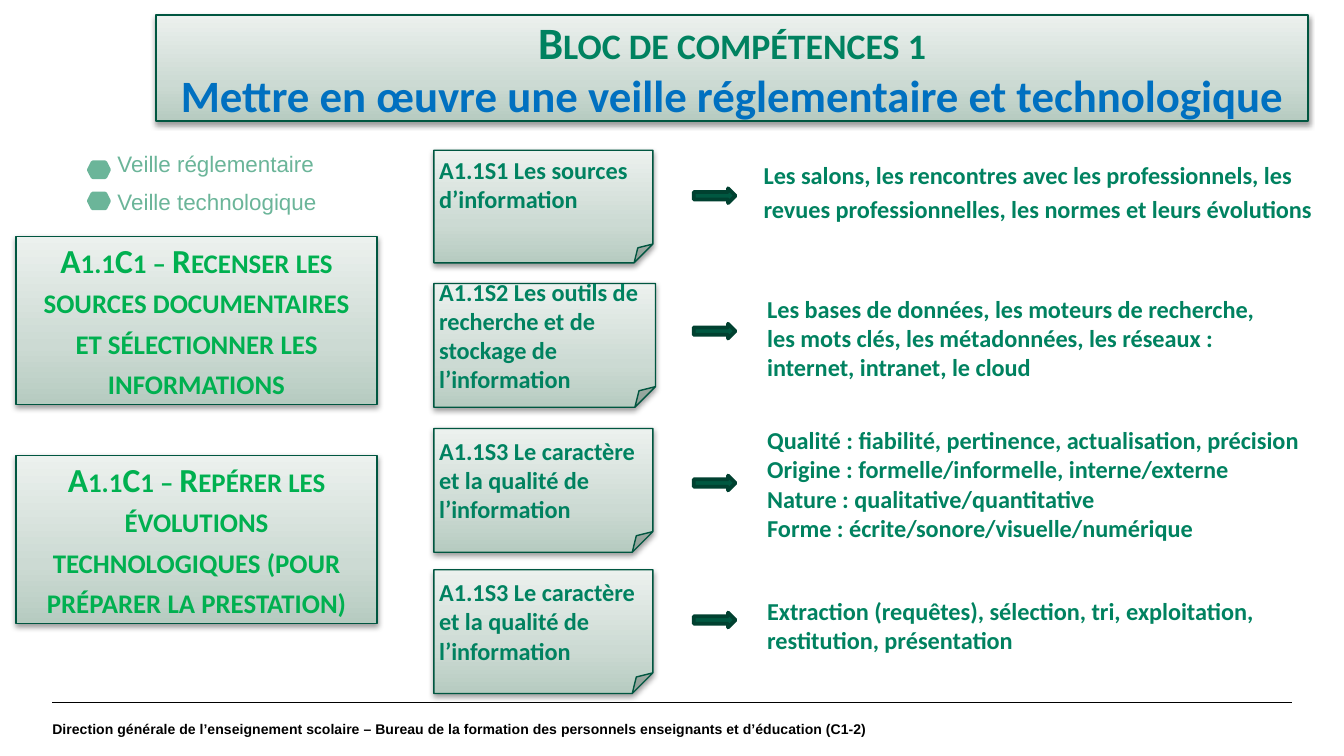
from copy import deepcopy

from lxml import etree
from pptx import Presentation
from pptx.dml.color import RGBColor
from pptx.enum.shapes import MSO_CONNECTOR, MSO_SHAPE
from pptx.enum.text import MSO_ANCHOR, MSO_AUTO_SIZE, PP_ALIGN
from pptx.oxml.ns import qn
from pptx.util import Cm, Pt

TOP, MIDDLE = MSO_ANCHOR.TOP, MSO_ANCHOR.MIDDLE
LEFT, CENTER = PP_ALIGN.LEFT, PP_ALIGN.CENTER
RECTANGLE, NOTE = MSO_SHAPE.RECTANGLE, MSO_SHAPE.FOLDED_CORNER
HEXAGON, ARROW = MSO_SHAPE.HEXAGON, MSO_SHAPE.RIGHT_ARROW

BLACK = RGBColor(0x00, 0x00, 0x00)
BLUE = RGBColor(0x00, 0x70, 0xC0)
GREEN = RGBColor(0x00, 0x82, 0x60)
BRIGHT_GREEN = RGBColor(0x00, 0xB0, 0x50)
PALE_GREEN = RGBColor(0x6B, 0xB5, 0x99)
ARROW_FILL = RGBColor(0x00, 0x58, 0x41)
ARROW_EDGE = RGBColor(0x00, 0x41, 0x30)
PANEL_EDGE = RGBColor(0x00, 0x56, 0x40)
PANEL_STOPS = [
    (0, RGBColor(0xB6, 0xCB, 0xC0)),
    (0.35, RGBColor(0xCC, 0xDA, 0xD3)),
    (1, RGBColor(0xEC, 0xF1, 0xEE)),
]

# Content; lengths in cm
TITLE = ["Bloc de compétences 1", "Mettre en œuvre une veille réglementaire et technologique"]
WATCHES = [  # label, label top, bullet top
    ("Veille réglementaire", 2.72, 3.07),
    ("Veille technologique", 3.43, 3.66),
]
SKILLS = [  # text, top
    ("A1.1C1 – Recenser les sources documentaires et sélectionner les informations", 4.47),
    ("A1.1C1 – Repérer les évolutions technologiques (pour préparer la prestation)", 8.61),
]
TOPICS = [  # text, top, width, height, anchor, arrow top
    ("A1.1S1 Les sources d’information", 2.84, 4.14, 2.13, TOP, 3.56),
    ("A1.1S2 Les outils de recherche et de stockage de l’information",
     5.36, 4.19, 2.34, MIDDLE, 6.12),
    ("A1.1S3 Le caractère et la qualité de l’information", 8.1, 4.14, 2.34, MIDDLE, 8.99),
    ("A1.1S3 Le caractère et la qualité de l’information", 10.77, 4.14, 2.34, MIDDLE, 11.58),
]
SOURCES = ("Les salons, les rencontres avec les professionnels, les revues "
           "professionnelles, les normes et leurs évolutions")
DETAILS = [  # paragraphs, top, width, height
    (["Les bases de données, les moteurs de recherche, les mots clés, les métadonnées, "
      "les réseaux : internet, intranet, le cloud"], 5.44, 10.11, 1.93),
    (["Qualité : fiabilité, pertinence, actualisation, précision",
      "Origine : formelle/informelle, interne/externe",
      "Nature : qualitative/quantitative",
      "Forme : écrite/sonore/visuelle/numérique"], 7.92, 11.1, 2.49),
    (["Extraction (requêtes), sélection, tri, exploitation,",
      "restitution, présentation"], 11.15, 11.1, 1.37),
]
FOOTER = ("Direction générale de l’enseignement scolaire – Bureau de la formation "
          "des personnels enseignants et d’éducation (C1-2)")
DETAIL_X = 14.25

prs = Presentation()
prs.slide_width, prs.slide_height = Cm(25.4), Cm(14.29)
slide = prs.slides.add_slide(prs.slide_layouts[5])
shapes = slide.shapes


def write(frame, lines, size, color, font="Calibri", bold=True, align=LEFT,
          anchor=TOP, inset=None, small_caps=False):
    frame.word_wrap = True
    frame.auto_size = MSO_AUTO_SIZE.NONE
    frame.vertical_anchor = anchor
    if inset is not None:
        frame.margin_left = frame.margin_right = Cm(inset)
        frame.margin_top = frame.margin_bottom = Cm(inset)
    frame.text = "\n".join(lines)
    for paragraph in frame.paragraphs:
        style(paragraph, size, color, font, bold, align)
        if small_caps:
            paragraph.runs[0].font._element.set("cap", "small")


def style(paragraph, size, color, font="Calibri", bold=True, align=LEFT):
    paragraph.alignment = align
    paragraph.font.size, paragraph.font.name = Pt(size), font
    paragraph.font.bold = bold
    paragraph.font.color.rgb = color


def add_text(x, y, w, h, lines, size, color, **options):
    box = shapes.add_textbox(Cm(x), Cm(y), Cm(w), Cm(h))
    write(box.text_frame, lines, size, color, **options)


def add_mark(kind, x, y, w, h, fill, edge):
    mark = shapes.add_shape(kind, Cm(x), Cm(y), Cm(w), Cm(h))
    mark.shadow.inherit = False
    mark.fill.solid()
    mark.fill.fore_color.rgb = fill
    mark.line.color.rgb = edge
    mark.line.width = Pt(2)


def format_panel(panel):
    """Green gradient, thin edge and soft shadow below."""
    panel.fill.gradient()
    panel.fill.gradient_angle = 90
    stop_list = panel._element.spPr.find(".//" + qn("a:gsLst"))
    stop_list.append(deepcopy(stop_list[0]))
    for stop, (position, color) in zip(panel.fill.gradient_stops, PANEL_STOPS):
        stop.position = position
        stop.color.rgb = color
    panel.line.color.rgb = PANEL_EDGE
    panel.line.width = Pt(0.75)
    panel.shadow.inherit = False
    effects = panel._element.spPr.find(qn("a:effectLst"))
    shadow = etree.SubElement(effects, qn("a:outerShdw"), blurRad=str(Pt(3.1)),
                              dist=str(Pt(1.6)), dir="5400000", rotWithShape="0")
    shade = etree.SubElement(shadow, qn("a:srgbClr"), val="000000")
    etree.SubElement(shade, qn("a:alpha"), val="38000")


def add_panel(kind, x, y, w, h, text, size, color, **options):
    panel = shapes.add_shape(kind, Cm(x), Cm(y), Cm(w), Cm(h))
    format_panel(panel)
    write(panel.text_frame, [text], size, color, **options)


# Title
title = shapes.title
title.left, title.top, title.width, title.height = Cm(2.95), Cm(0.28), Cm(21.77), Cm(2.01)
format_panel(title)
write(title.text_frame, TITLE, 24, GREEN, align=CENTER, anchor=MIDDLE)
heading, subject = title.text_frame.paragraphs
heading.runs[0].font._element.set("cap", "small")
subject.font.color.rgb = BLUE

# Footer
rule = shapes.add_connector(MSO_CONNECTOR.STRAIGHT, Cm(0.99), Cm(13.28), Cm(24.41), Cm(13.28))
rule.line.color.rgb = BLACK
rule.line.width = Pt(0.8)
etree.SubElement(rule._element.spPr, qn("a:effectLst"))
add_text(0.99, 13.28, 23.7, 0.99, [FOOTER], 7.5, BLACK, font="Arial", anchor=MIDDLE, inset=0)

# Kinds of watch and skills
for label, label_y, bullet_y in WATCHES:
    add_text(1.97, label_y, 5, 0.76, [label], 12, PALE_GREEN, font="Arial", bold=False)
    add_mark(HEXAGON, 1.68, bullet_y, 0.38, 0.28, PALE_GREEN, PALE_GREEN)
for skill, y in SKILLS:
    add_panel(RECTANGLE, 0.3, y, 6.83, 3.18, skill, 18, BRIGHT_GREEN,
              align=CENTER, anchor=MIDDLE, small_caps=True)

# Topics with their arrows
for topic, y, w, h, anchor, arrow_y in TOPICS:
    add_panel(NOTE, 8.2, y, w, h, topic, 13, GREEN, anchor=anchor, inset=0.1)
    add_mark(ARROW, 13.11, arrow_y, 0.79, 0.28, ARROW_FILL, ARROW_EDGE)

# Details: a one-cell table, then text
table = shapes.add_table(1, 1, Cm(DETAIL_X), Cm(2.97), Cm(10.77), Cm(2.13)).table
table.first_row = table.horz_banding = False
cell = table.cell(0, 0)
cell.fill.background()
cell.margin_left = cell.margin_right = Cm(0.18)
cell.margin_top = cell.margin_bottom = 0
cell.text = SOURCES
sources = cell.text_frame.paragraphs[0]
sources.line_spacing = 1.15
style(sources, 13, GREEN)
for lines, y, w, h in DETAILS:
    add_text(DETAIL_X, y, w, h, lines, 13, GREEN)

prs.save("out.pptx")
